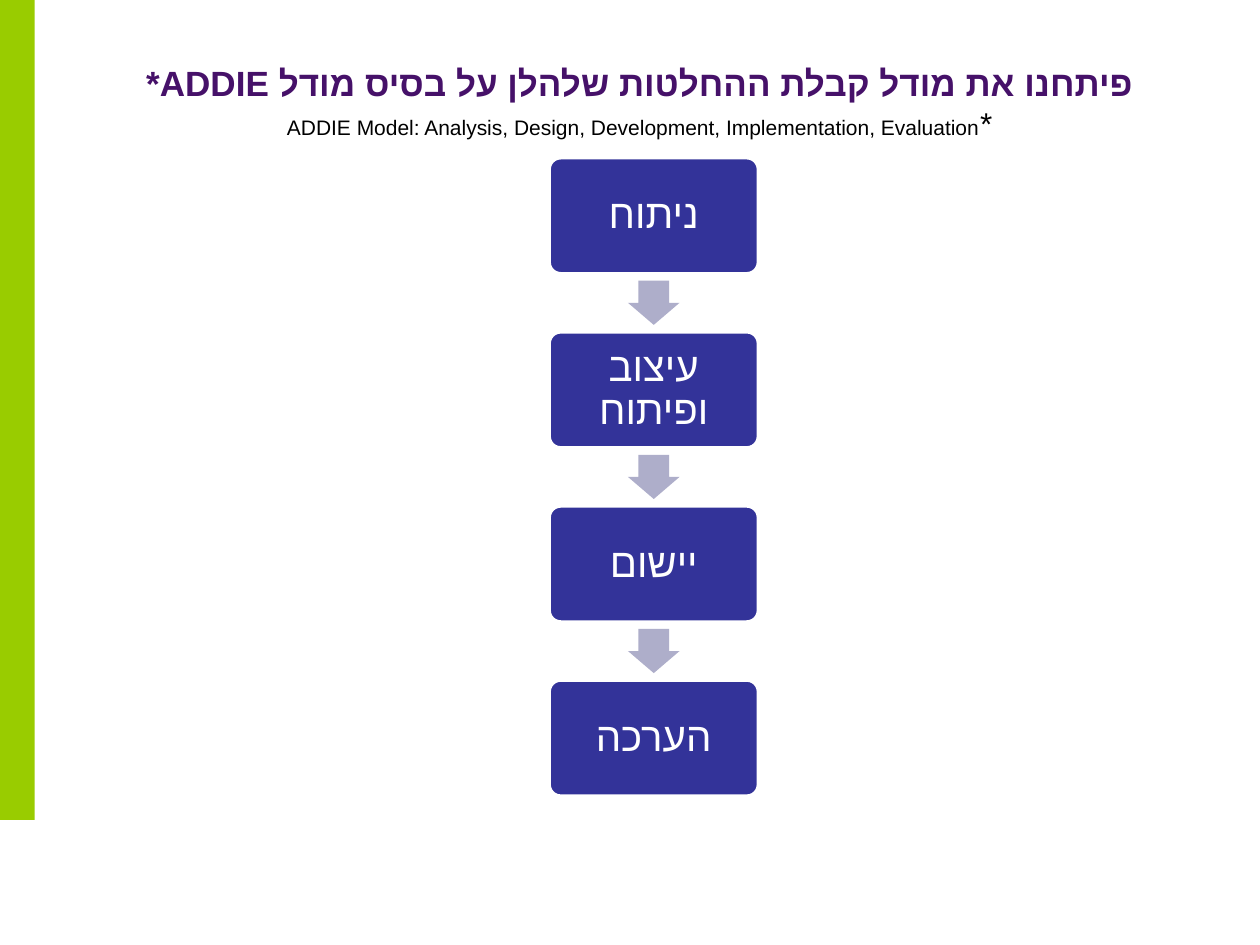
import pptx
import pptx.util
from lxml import etree
from pptx.dml.color import RGBColor
from pptx.enum.shapes import MSO_SHAPE
from pptx.enum.text import MSO_ANCHOR, PP_ALIGN
from pptx.oxml.ns import qn
from pptx.util import Cm

TITLE = "פיתחנו את מודל קבלת ההחלטות שלהלן על בסיס מודל ADDIE*"
NOTE_MARK = "*"
NOTE = "ADDIE Model: Analysis, Design, Development, Implementation, Evaluation"
STEPS = ["ניתוח", "עיצוב ופיתוח", "יישום", "הערכה"]

FONT = "Arial"
GREEN = RGBColor(0x99, 0xCC, 0x00)
BLUE = RGBColor(0x33, 0x33, 0x99)
LAVENDER = RGBColor(0xAE, 0xAE, 0xCA)
PURPLE = RGBColor(0x46, 0x11, 0x69)
BLACK = RGBColor(0, 0, 0)
WHITE = RGBColor(0xFF, 0xFF, 0xFF)

CENTER = 13.18
STEP_TOP, STEP_PITCH = 3.18, 3.51
STEP_WIDTH, STEP_HEIGHT = 4.22, 2.34
ARROW_WIDTH, ARROW_HEIGHT = 1.04, 0.89


def add_text(paragraph, text, size, color, bold=False, line_spacing=None):
    paragraph.alignment = PP_ALIGN.CENTER
    paragraph._p.get_or_add_pPr().set("rtl", "1")
    if line_spacing:
        paragraph.line_spacing = line_spacing
    run = paragraph.add_run()
    run.text = text
    run.font.size = pptx.util.Pt(size)
    run.font.bold = bold
    run.font.color.rgb = color
    run.font.name = FONT
    etree.SubElement(run._r.get_or_add_rPr(), qn("a:cs")).set("typeface", FONT)


def add_block(slide, kind, left, top, width, height, fill, adjustments=()):
    shape = slide.shapes.add_shape(kind, Cm(left), Cm(top), Cm(width), Cm(height))
    shape.shadow.inherit = False
    shape.fill.solid()
    shape.fill.fore_color.rgb = fill
    shape.line.fill.background()
    for index, value in enumerate(adjustments):
        shape.adjustments[index] = value
    return shape


def add_step(slide, text, top):
    box = add_block(slide, MSO_SHAPE.ROUNDED_RECTANGLE, CENTER - STEP_WIDTH / 2, top,
                    STEP_WIDTH, STEP_HEIGHT, BLUE, [0.1])
    box.line.color.rgb = WHITE
    box.line.width = pptx.util.Pt(2)
    frame = box.text_frame
    frame.word_wrap = True
    frame.vertical_anchor = MSO_ANCHOR.MIDDLE
    frame.margin_left = frame.margin_right = Cm(0.25)
    frame.margin_top = frame.margin_bottom = Cm(0.25)
    add_text(frame.paragraphs[0], text, size=23, color=WHITE, line_spacing=0.9)


def main():
    presentation = pptx.Presentation()
    presentation.slide_width = Cm(25.4)
    presentation.slide_height = Cm(19.05)
    slide = presentation.slides.add_slide(presentation.slide_layouts[6])

    add_block(slide, MSO_SHAPE.RECTANGLE, 0, 0, 0.7, 16.53, GREEN)

    for index, step in enumerate(STEPS):
        top = STEP_TOP + index * STEP_PITCH
        add_step(slide, step, top)
        if index < len(STEPS) - 1:
            gap = STEP_PITCH - STEP_HEIGHT
            arrow_top = top + STEP_HEIGHT + (gap - ARROW_HEIGHT) / 2
            add_block(slide, MSO_SHAPE.DOWN_ARROW, CENTER - ARROW_WIDTH / 2, arrow_top,
                      ARROW_WIDTH, ARROW_HEIGHT, LAVENDER, [0.6, 0.5])

    heading = slide.shapes.add_textbox(Cm(1.3), Cm(1.12), Cm(23.19), Cm(3.4)).text_frame
    heading.word_wrap = True
    add_text(heading.paragraphs[0], TITLE, size=20, color=PURPLE, bold=True)
    note = heading.add_paragraph()
    add_text(note, NOTE_MARK, size=18, color=BLACK)
    add_text(note, NOTE, size=12, color=BLACK)

    presentation.save("out.pptx")


if __name__ == "__main__":
    main()
